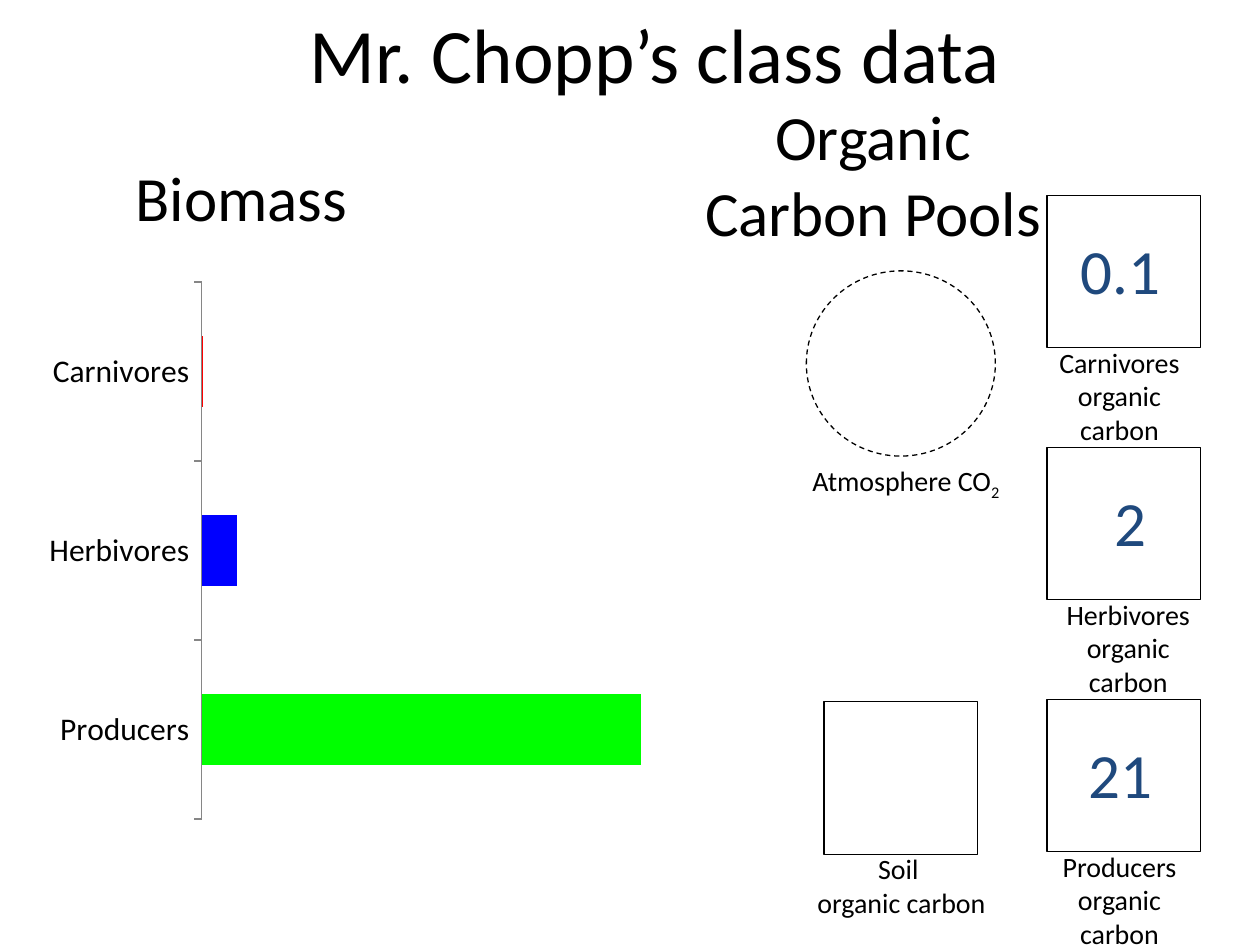
from pptx import Presentation, util as u
from pptx.chart.data import CategoryChartData
from pptx.dml.color import RGBColor
from pptx.enum import chart as ch, dml, shapes, text

FONT, BLACK, NAVY = "Calibri", "000000", "1F497D"
HEADINGS = [
    ("Mr. Chopp’s class data", 44, (0.95, -0.02, 8.5, 0.88)),
    ("Biomass", 36, (0.5, 0.93, 2.83, 1.25)),
    ("Organic Carbon Pools", 36, (5.28, 0.75, 3.3, 1.25)),
]
BIOMASS = [("Carnivores", 0.4, "FF0000"), ("Herbivores", 8, "0000FF"), ("Producers", 100, "00FF00")]
POOLS = [
    ("Carnivores", "0.1", 0, 0),
    ("Herbivores", "2", 0.07, 0.08),
    ("Producers", "21", 0, 0),
]
POOL_LEFT, POOL_TOP, POOL_STEP = 8.31, 1.55, 2
POOL_W, POOL_H = 1.22, 1.21

prs = Presentation()
prs.slide_width, prs.slide_height = u.Inches(10), u.Inches(7.5)
slide = prs.slides.add_slide(prs.slide_layouts[6])


def color(value):
    return RGBColor.from_string(value)


def inches(place):
    return [u.Inches(length) for length in place]


def set_font(font, size, tint=BLACK):
    font.name, font.size = FONT, u.Pt(size)
    font.color.rgb = color(tint)


def add_text(place, lines, size, tint=BLACK, anchor=text.MSO_ANCHOR.TOP):
    frame = slide.shapes.add_textbox(*inches(place)).text_frame
    frame.word_wrap = True
    frame.vertical_anchor = anchor
    frame.text = lines
    for paragraph in frame.paragraphs:
        paragraph.alignment = text.PP_ALIGN.CENTER
        set_font(paragraph.font, size, tint)
    return frame


def add_pool(kind, place, fill=None):
    pool = slide.shapes.add_shape(kind, *inches(place))
    pool.shadow.inherit = False
    if fill:
        pool.fill.solid()
        pool.fill.fore_color.rgb = color(fill)
    else:
        pool.fill.background()
    pool.line.color.rgb = color(BLACK)
    pool.line.width = u.Pt(0.75)
    return pool


def add_biomass_chart(place):
    data = CategoryChartData()
    data.categories = [level for level, _, _ in BIOMASS]
    data.add_series("Series 1", [value for _, value, _ in BIOMASS])
    chart = slide.shapes.add_chart(ch.XL_CHART_TYPE.BAR_CLUSTERED, *inches(place), data).chart
    chart.has_legend = chart.has_title = False
    set_font(chart.font, 18)

    levels, amounts = chart.category_axis, chart.value_axis
    levels.reverse_order = True
    levels.major_tick_mark = ch.XL_TICK_MARK.OUTSIDE
    levels.format.line.color.rgb = color("868686")
    amounts.visible = amounts.has_major_gridlines = False
    amounts.minimum_scale, amounts.maximum_scale = 0, 120

    plot = chart.plots[0]
    plot.gap_width = 150
    plot.vary_by_categories = False
    bars = plot.series[0]
    bars.format.fill.solid()
    bars.format.fill.fore_color.rgb = color("4F81BD")
    for index, (_, _, tint) in enumerate(BIOMASS):
        fill = bars.points[index].format.fill
        fill.solid()
        fill.fore_color.rgb = color(tint)


for heading, size, place in HEADINGS:
    add_text(place, heading, size, anchor=text.MSO_ANCHOR.MIDDLE)

add_biomass_chart((0.28, 2.15, 5.62, 4.44))

atmosphere = add_pool(shapes.MSO_SHAPE.OVAL, (6.4, 2.15, 1.5, 1.47), "FFFFFF")
atmosphere.line.dash_style = dml.MSO_LINE.DASH
atmosphere_label = add_text((6.27, 3.63, 1.84, 0.3), "Atmosphere CO", 16)
subscript = atmosphere_label.paragraphs[0].add_run()
subscript.text = "2"
subscript.font._element.set("baseline", "-25000")

for row, (level, carbon, label_shift, value_shift) in enumerate(POOLS):
    top = POOL_TOP + row * POOL_STEP
    add_pool(shapes.MSO_SHAPE.RECTANGLE, (POOL_LEFT, top, POOL_W, POOL_H))
    add_text((POOL_LEFT - 0.14 + label_shift, top + 1.14, 1.43, 0.51), f"{level} organic carbon", 16)
    add_text((POOL_LEFT + 0.03 + value_shift, top + 0.24, 1.11, 0.71), carbon, 36, NAVY)

add_pool(shapes.MSO_SHAPE.RECTANGLE, (6.54, 5.57, POOL_W, POOL_H))
add_text((6.34, 6.71, 1.63, 0.64), "Soil \norganic carbon", 16)

prs.save("out.pptx")
